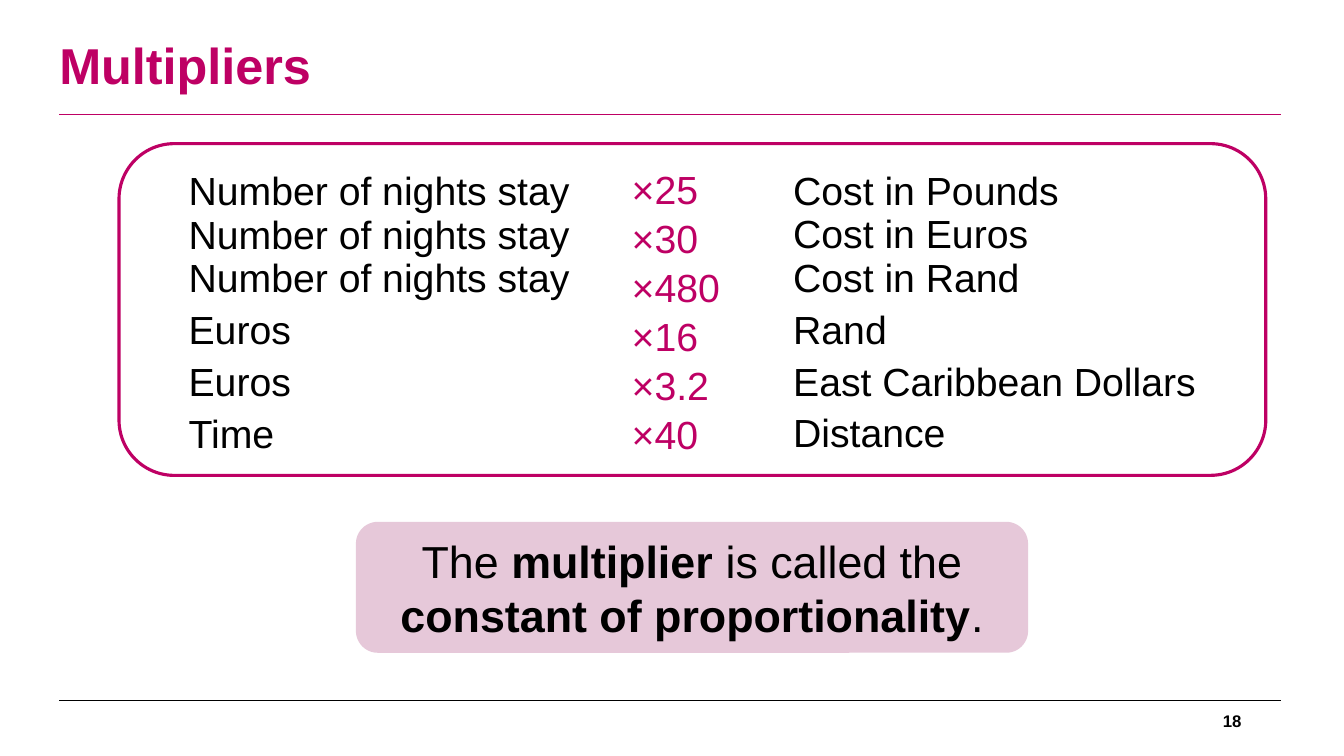
from dataclasses import dataclass

import pptx
import pptx.dml.color
import pptx.enum.shapes
import pptx.enum.text
import pptx.oxml.ns
import pptx.util
from lxml import etree

Cm = pptx.util.Cm
Pt = pptx.util.Pt
Color = pptx.dml.color.RGBColor.from_string
Align = pptx.enum.text.PP_ALIGN
Anchor = pptx.enum.text.MSO_ANCHOR
Shape = pptx.enum.shapes.MSO_SHAPE
qn = pptx.oxml.ns.qn


@dataclass(frozen=True)
class Theme:
    font: str = "Arial"
    accent: str = "BE0064"
    tint: str = "E6C8D9"
    ink: str = "000000"
    title_size: int = 36
    callout_size: int = 32
    list_size: int = 28
    number_size: int = 12


THEME = Theme()

# Each entry is one paragraph; the first three rows share one, with line breaks
NIGHTS = "\n".join(["Number of nights stay"] * 3)
QUANTITIES = [NIGHTS, "Euros", "Euros", "Time"]
MULTIPLIERS = ["×25", "×30", "×480", "×16", "×3.2", "×40"]
RESULTS = ["Cost in Pounds\nCost in Euros\nCost in Rand",
           "Rand", "East Caribbean Dollars", "Distance"]
CALLOUT = [("The ", False), ("multiplier", True), (" is called the ", False),
           ("constant of proportionality", True), (".", False)]


def apply(target, values):
    for name, value in values.items():
        setattr(target, name, value)


def place(shape, box):
    apply(shape, dict(zip(("left", "top", "width", "height"), map(Cm, box))))


def style_runs(paragraph, size, color, bold=False):
    for run in paragraph.runs:
        apply(run.font, {"name": THEME.font, "size": Pt(size), "bold": bold})
        run.font.color.rgb = Color(color)


def fill_list(frame, texts, color, spacing):
    """Write one unbulleted paragraph per text with fixed line spacing."""
    apply(frame, {"word_wrap": True, "vertical_anchor": Anchor.TOP,
                  "auto_size": pptx.enum.text.MSO_AUTO_SIZE.NONE})
    for index, text in enumerate(texts):
        paragraph = frame.add_paragraph() if index else frame.paragraphs[0]
        paragraph.text = text
        apply(paragraph, {"line_spacing": Pt(spacing), "space_before": Pt(0),
                          "space_after": Pt(6), "alignment": Align.LEFT})
        properties = paragraph._p.get_or_add_pPr()
        for name in ("marL", "indent"):
            properties.set(name, "0")
        etree.SubElement(properties, qn("a:buNone"))
        style_runs(paragraph, THEME.list_size, color)


def add_rule(slide, left, top, width, color):
    rule = slide.shapes.add_connector(pptx.enum.shapes.MSO_CONNECTOR.STRAIGHT,
                                      Cm(left), Cm(top), Cm(left + width), Cm(top))
    rule.line.width = Pt(0.75)
    rule.line.fill.solid()
    rule.line.fill.fore_color.rgb = Color(color)
    etree.SubElement(rule._element.spPr, qn("a:effectLst"))


def add_rounded_box(slide, box):
    shape = slide.shapes.add_shape(Shape.ROUNDED_RECTANGLE, *map(Cm, box))
    shape.shadow.inherit = False
    return shape


def add_header(slide, box):
    left, top, width, height = box
    title = slide.shapes.title
    place(title, (left - 0.25, top, 25.4, height))
    frame = title.text_frame
    frame.text = "Multipliers"
    frame.vertical_anchor = Anchor.MIDDLE
    paragraph = frame.paragraphs[0]
    apply(paragraph, {"alignment": Align.LEFT, "line_spacing": 0.9})
    style_runs(paragraph, THEME.title_size, THEME.accent, True)
    add_rule(slide, left, top + 2.58, width, THEME.accent)


def add_multiplier_panel(slide, box):
    left, top, width, height = box
    # Outline
    panel = add_rounded_box(slide, box)
    panel.fill.background()
    panel.line.color.rgb = Color(THEME.accent)
    panel.line.width = Pt(2.25)

    # Starting quantities
    body = slide.placeholders[1]
    place(body, (left + 1.5, top + 0.54, 11, 7.52))
    fill_list(body.text_frame, QUANTITIES, THEME.ink, 31)

    # Multipliers and resulting quantities
    for offset, drop, column_width, texts, color, spacing in (
            (12.67, 0.59, 4, MULTIPLIERS, THEME.accent, 29),
            (16.74, 0.54, width - 16.74, RESULTS, THEME.ink, 31)):
        column = slide.shapes.add_textbox(
            *map(Cm, (left + offset, top + drop, column_width, 7.52)))
        fill_list(column.text_frame, texts, color, spacing)


def add_callout(slide, box):
    callout = add_rounded_box(slide, box)
    callout.fill.solid()
    callout.fill.fore_color.rgb = Color(THEME.tint)
    callout.line.fill.background()
    frame = callout.text_frame
    apply(frame, {"word_wrap": True, "vertical_anchor": Anchor.MIDDLE})
    paragraph = frame.paragraphs[0]
    paragraph.alignment = Align.CENTER
    for text, _ in CALLOUT:
        paragraph.add_run().text = text
    style_runs(paragraph, THEME.callout_size, THEME.ink)
    for run, (_, bold) in zip(paragraph.runs, CALLOUT):
        run.font.bold = bold


def add_footer(slide, box):
    left, top, width, height = box
    add_rule(slide, left, top, width, THEME.ink)
    number = slide.shapes.add_textbox(
        *map(Cm, (left + width - 8.37, top + 0.02, 7.62, height)))
    frame = number.text_frame
    frame.text = "18"
    apply(frame, {"word_wrap": True, "vertical_anchor": Anchor.MIDDLE})
    frame.paragraphs[0].alignment = Align.RIGHT
    style_runs(frame.paragraphs[0], THEME.number_size, THEME.ink, True)


def main():
    presentation = pptx.Presentation()
    apply(presentation, {"slide_width": Cm(33.87), "slide_height": Cm(19.05)})
    slide = presentation.slides.add_slide(presentation.slide_layouts[1])
    add_header(slide, (1.49, 0.3, 30.8, 2.82))
    add_multiplier_panel(slide, (3, 3.62, 28.9, 8.36))
    add_callout(slide, (8.97, 13.15, 16.94, 3.3))
    add_footer(slide, (1.49, 17.64, 30.8, 1.02))
    presentation.save("out.pptx")


if __name__ == "__main__":
    main()
